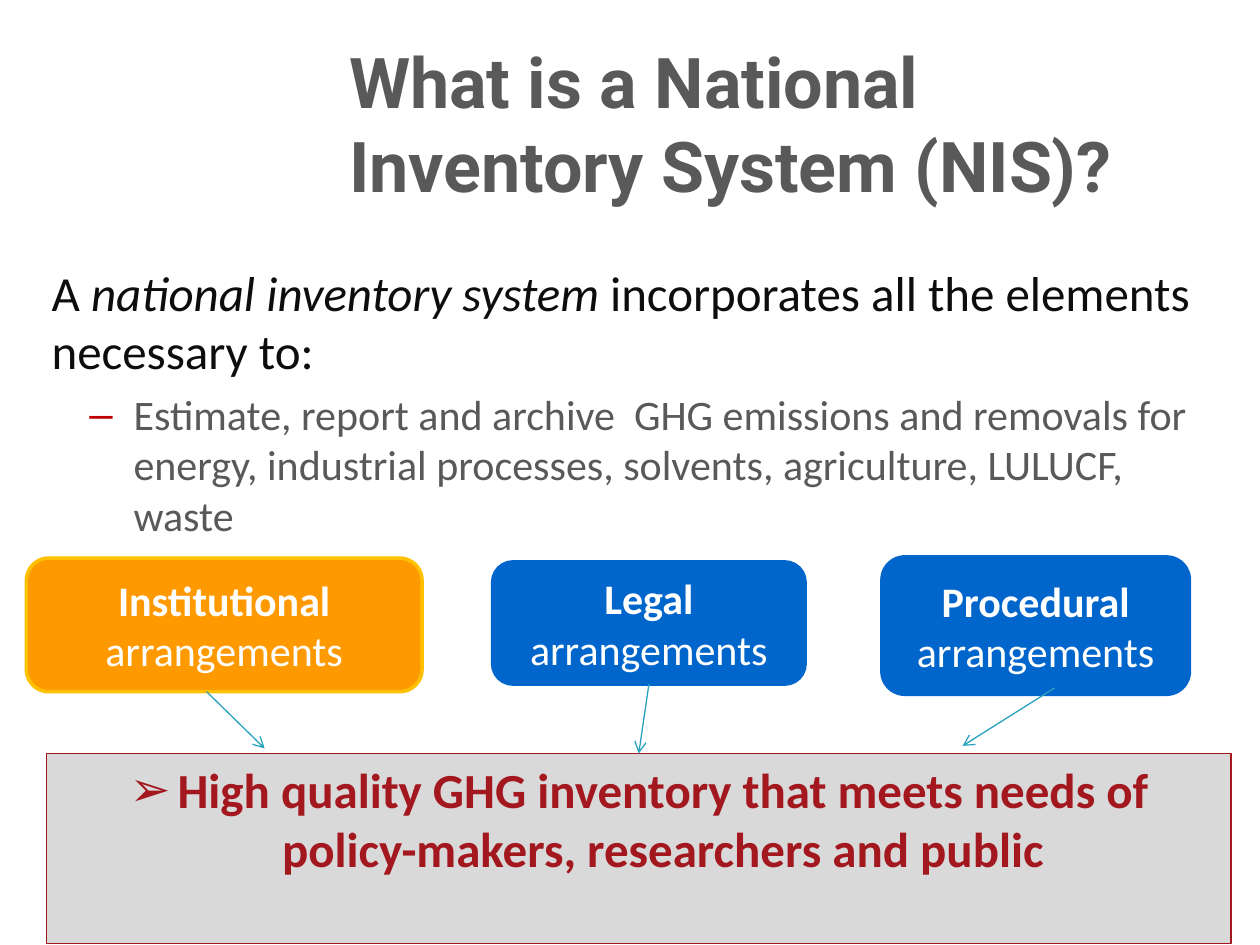
from dataclasses import dataclass

from lxml import etree
from pptx import Presentation
from pptx.dml.color import RGBColor
from pptx.enum.shapes import MSO_CONNECTOR, MSO_SHAPE
from pptx.enum.text import MSO_ANCHOR, MSO_AUTO_SIZE, PP_ALIGN
from pptx.oxml.ns import qn
from pptx.util import Inches, Pt

RECTANGLE = MSO_SHAPE.RECTANGLE
ROUNDED = MSO_SHAPE.ROUNDED_RECTANGLE
STRAIGHT = MSO_CONNECTOR.STRAIGHT
LEFT, CENTER = PP_ALIGN.LEFT, PP_ALIGN.CENTER
TOP, MIDDLE = MSO_ANCHOR.TOP, MSO_ANCHOR.MIDDLE
NO_AUTOFIT = MSO_AUTO_SIZE.NONE


@dataclass(frozen=True)
class Theme:
    heading_font: str = "Roboto"
    body_font: str = "Calibri"
    title_size: int = 40
    lead_size: int = 28
    detail_size: int = 24
    ink: str = "0D0D0D"
    gray: str = "595959"
    white: str = "FFFFFF"
    dash: str = "C00000"
    red: str = "A3171E"
    panel: str = "D9D9D9"
    blue: str = "0066CC"
    orange: str = "FF9900"
    amber: str = "FFC000"
    arrow: str = "28A1BE"


class SlideBuilder:
    def __init__(self, slide, theme):
        self.slide = slide
        self.theme = theme

    def place(self, shape, left, top, width, height):
        shape.left, shape.top = Inches(left), Inches(top)
        shape.width, shape.height = Inches(width), Inches(height)

    def style(self, span, size, color, bold=False, italic=False, font=None):
        span.font.name = font or self.theme.body_font
        span.font.size = Pt(size)
        span.font.bold = bold
        span.font.italic = italic
        span.font.color.rgb = RGBColor.from_string(color)

    def bullet(self, para, margin, indent, mark=None, color=None):
        properties = para._p.get_or_add_pPr()
        properties.set("marL", str(Inches(margin)))
        properties.set("indent", str(Inches(indent)))
        if mark is None:
            etree.SubElement(properties, qn("a:buNone"))
            return
        if color:
            holder = etree.SubElement(properties, qn("a:buClr"))
            etree.SubElement(holder, qn("a:srgbClr"), val=color)
        etree.SubElement(properties, qn("a:buFont"), typeface="Arial")
        etree.SubElement(properties, qn("a:buChar"), char=mark)

    def title(self, text, *bounds):
        box = self.slide.shapes.title
        self.place(box, *bounds)
        frame = box.text_frame
        frame.text = text
        frame.auto_size = NO_AUTOFIT
        frame.vertical_anchor = MIDDLE
        para = frame.paragraphs[0]
        para.alignment = LEFT
        self.style(para.runs[0], self.theme.title_size, self.theme.gray,
                   bold=True, font=self.theme.heading_font)

    def body(self, lead, detail, *bounds):
        theme = self.theme
        box = self.slide.placeholders[1]
        self.place(box, *bounds)
        frame = box.text_frame
        frame.auto_size = NO_AUTOFIT
        para = frame.paragraphs[0]
        self.bullet(para, 0, 0)
        para.space_before = Pt(0)
        for text, italic in lead:
            span = para.add_run()
            span.text = text
            self.style(span, theme.lead_size, theme.ink, italic=italic)
        para = frame.add_paragraph()
        para.text = detail
        para.level = 1
        self.bullet(para, 0.65, -0.35, "–", theme.dash)
        para.space_before = Pt(5)
        self.style(para.runs[0], theme.detail_size, theme.gray)

    def box(self, kind, bounds, fill, line, line_width, anchor):
        shape = self.slide.shapes.add_shape(kind, *map(Inches, bounds))
        shape.shadow.inherit = False
        shape.fill.solid()
        shape.fill.fore_color.rgb = RGBColor.from_string(fill)
        shape.line.color.rgb = RGBColor.from_string(line)
        shape.line.width = Pt(line_width)
        frame = shape.text_frame
        frame.word_wrap = True
        frame.vertical_anchor = anchor
        para = frame.paragraphs[0]
        para.alignment = CENTER
        return para

    def outcome(self, text, *bounds):
        theme = self.theme
        para = self.box(RECTANGLE, bounds, theme.panel, theme.red, 0.75, TOP)
        para.text = text
        self.bullet(para, 0.38, -0.38, "➢")
        self.style(para.runs[0], theme.lead_size, theme.red, bold=True)

    def arrangement(self, kind, bounds, fill, line):
        para = self.box(ROUNDED, bounds, fill, line, 2, MIDDLE)
        for text, bold in ((f"{kind} ", True), ("arrangements", False)):
            span = para.add_run()
            span.text = text
            self.style(span, self.theme.detail_size, self.theme.white, bold=bold)

    def arrow(self, start, end):
        connector = self.slide.shapes.add_connector(
            STRAIGHT, *map(Inches, start + end))
        connector.line.color.rgb = RGBColor.from_string(self.theme.arrow)
        connector.line.width = Pt(0.75)
        etree.SubElement(connector.line._get_or_add_ln(), qn("a:tailEnd"), type="arrow")
        etree.SubElement(connector._element.spPr, qn("a:effectLst"))


def main():
    theme = Theme()
    deck = Presentation()
    deck.slide_width, deck.slide_height = Inches(10), Inches(7.5)
    page = SlideBuilder(deck.slides.add_slide(deck.slide_layouts[1]), theme)

    page.title("What is a National Inventory System (NIS)?", 2.67, 0.14, 7.16, 1.67)
    page.body(
        (("A ", False), ("national inventory system", True),
         (" incorporates all the elements necessary to:", False)),
        "Estimate, report and archive  GHG emissions and removals for energy, "
        "industrial processes, solvents, agriculture, LULUCF, waste",
        0.31, 2.03, 9.53, 5.08)
    page.outcome(
        "High quality GHG inventory that meets needs of policy-makers, "
        "researchers and public", 0.37, 5.98, 9.4, 1.51)

    arrangements = (
        ("Legal", (3.91, 4.46, 2.48, 0.97), theme.blue, theme.blue),
        ("Procedural", (7, 4.42, 2.44, 1.09), theme.blue, theme.blue),
        ("Institutional", (0.21, 4.43, 3.14, 1.06), theme.orange, theme.amber),
    )
    for arrangement in arrangements:
        page.arrangement(*arrangement)

    arrows = (
        ((1.64, 5.49), (2.1, 5.94)),
        ((5.15, 5.43), (5.07, 5.98)),
        ((8.37, 5.46), (7.64, 5.92)),
    )
    for start, end in arrows:
        page.arrow(start, end)

    deck.save("out.pptx")


if __name__ == "__main__":
    main()
